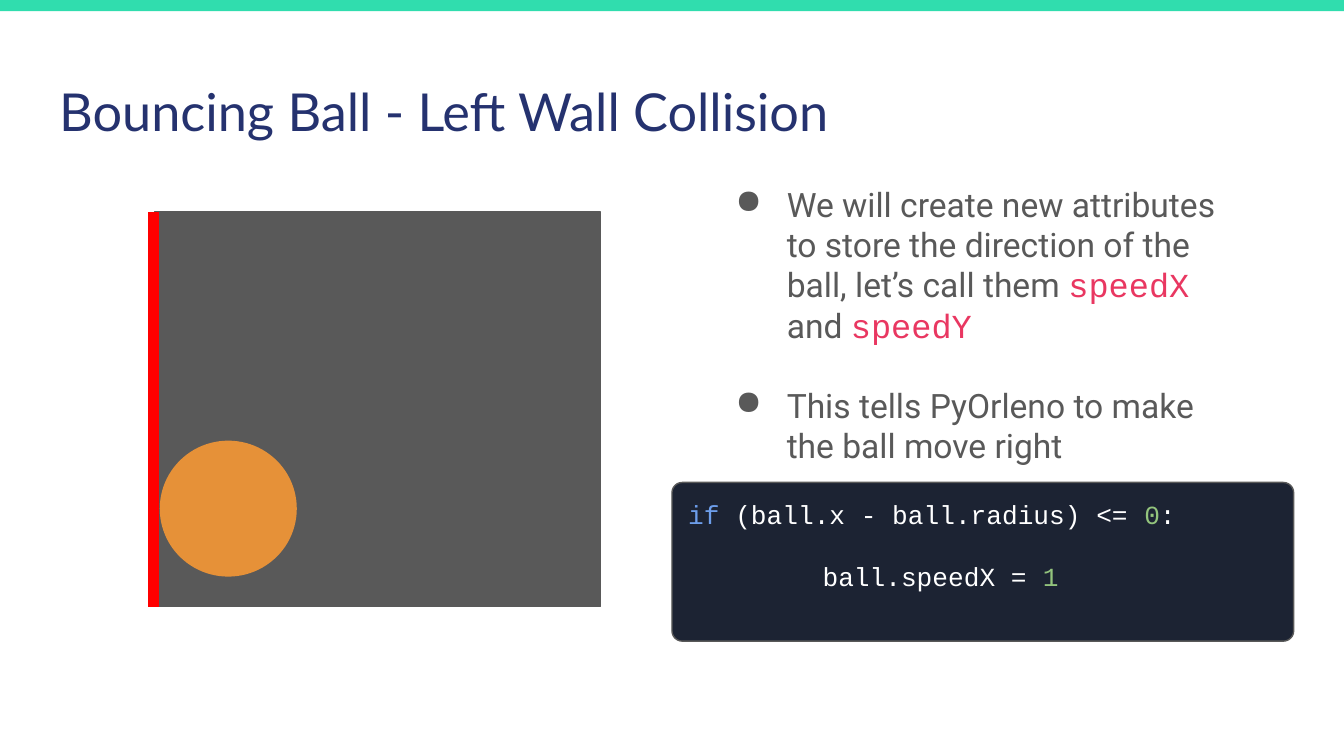
"""Build the slide on the bouncing ball hitting the left wall."""
from lxml.etree import SubElement
from pptx import Presentation
from pptx.dml.color import RGBColor
from pptx.enum.shapes import MSO_CONNECTOR, MSO_SHAPE
from pptx.enum.text import MSO_ANCHOR, PP_ALIGN
from pptx.oxml.ns import qn
from pptx.util import Cm, Pt

TEAL = RGBColor(0x30, 0xDD, 0xAE)
GREY = RGBColor(0x59, 0x59, 0x59)
ORANGE = RGBColor(0xE6, 0x91, 0x38)
NAVY = RGBColor(0x25, 0x32, 0x6F)
INK = RGBColor(0x1C, 0x23, 0x33)
BLUE = RGBColor(0x6D, 0x9E, 0xEB)
WHITE = RGBColor(0xFF, 0xFF, 0xFF)
GREEN = RGBColor(0x93, 0xC4, 0x7D)
RED = RGBColor(0xFF, 0x00, 0x00)
PINK = RGBColor(0xE9, 0x37, 0x61)


def add_block(page, kind, place, fill, outlined):
    block = page.shapes.add_shape(kind, *[Cm(length) for length in place])
    block.shadow.inherit = False
    block.fill.solid()
    block.fill.fore_color.rgb = fill
    if outlined:
        block.line.color.rgb = GREY
        block.line.width = Pt(0.75)
    else:
        block.line.fill.background()
    return block


def write_text(box, anchor, size, paragraphs):
    frame_format = {"word_wrap": True, "vertical_anchor": anchor}
    for side in ("left", "top", "right", "bottom"):
        frame_format[f"margin_{side}"] = Cm(0.25)
    for name, value in frame_format.items():
        setattr(box.text_frame, name, value)
    for index, (spacing, spans) in enumerate(paragraphs):
        para = box.text_frame.add_paragraph() if index else box.text_frame.paragraphs[0]
        for name, value in {"alignment": PP_ALIGN.LEFT, **spacing}.items():
            setattr(para, name, value)
        for text, font, colour in spans:
            span = para.add_run()
            span.text = text
            for name, value in {"name": font, "size": Pt(size)}.items():
                setattr(span.font, name, value)
            span.font.color.rgb = colour
    return box.text_frame.paragraphs


deck = Presentation()
deck.slide_width, deck.slide_height = Cm(25.4), Cm(14.29)
page = deck.slides.add_slide(deck.slide_layouts[6])

add_block(page, MSO_SHAPE.RECTANGLE, (0, 0, 25.4, 0.21), TEAL, False)
add_block(page, MSO_SHAPE.RECTANGLE, (2.92, 4.01, 8.43, 7.46), GREY, True)
add_block(page, MSO_SHAPE.OVAL, (3.02, 8.33, 2.59, 2.57), ORANGE, False)

title = page.shapes.add_textbox(Cm(0.87), Cm(1.24), Cm(23.67), Cm(1.6))
write_text(title, MSO_ANCHOR.TOP, 28, [
    ({}, [("Bouncing Ball - Left Wall Collision", "Lato", NAVY)]),
])

code = add_block(page, MSO_SHAPE.ROUNDED_RECTANGLE, (12.7, 9.12, 11.75, 3), INK, True)
code.adjustments[0] = 0.065
mono = "Courier New"
code_lines = write_text(code, MSO_ANCHOR.MIDDLE, 14, [
    ({}, [("if", mono, BLUE), (" (ball.x - ball.radius) <= ", mono, WHITE),
          ("0", mono, GREEN), (":", mono, WHITE)]),
    ({"space_before": Pt(16.5), "space_after": Pt(16)},
     [("ball.speedX = ", mono, WHITE), ("1", mono, GREEN)]),
])
code.text_frame.margin_bottom = Cm(0.87)
code_lines[1]._p.get_or_add_pPr().set("marL", str(Cm(2.54)))

wall = page.shapes.add_connector(MSO_CONNECTOR.STRAIGHT, Cm(2.9), Cm(4.01), Cm(2.9), Cm(11.48))
wall.line.color.rgb = RED
wall.line.width = Pt(6)
SubElement(wall._element.spPr, qn("a:effectLst"))

notes = page.shapes.add_textbox(Cm(13.35), Cm(3.22), Cm(10.46), Cm(6.68))
bullets = write_text(notes, MSO_ANCHOR.TOP, 18, [
    ({}, [("We will create new attributes to store the direction of the ball, "
           "let’s call them ", "Roboto", GREY),
          ("speedX", mono, PINK), (" and ", "Roboto", GREY), ("speedY", mono, PINK)]),
    ({"space_before": Pt(21.5)},
     [("This tells PyOrleno to make the ball move right", "Roboto", GREY)]),
])
for para in bullets:
    properties = para._p.get_or_add_pPr()
    for name, value in {"marL": Cm(1.27), "indent": Cm(-0.97)}.items():
        properties.set(name, str(value))
    colour = SubElement(properties, qn("a:buClr"))
    SubElement(colour, qn("a:srgbClr")).set("val", str(GREY))
    SubElement(properties, qn("a:buChar")).set("char", "●")

deck.save("out.pptx")
